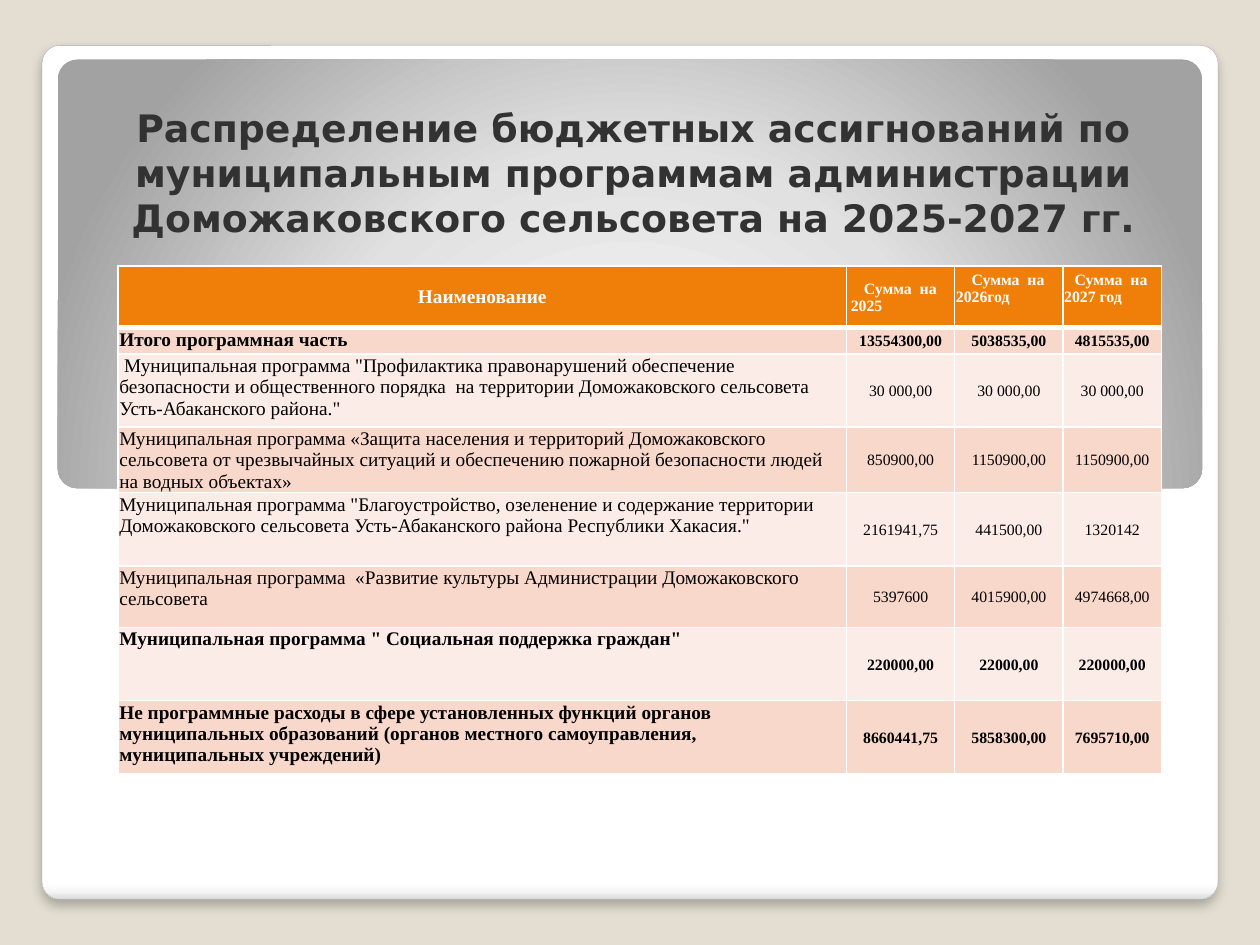
from lxml import etree
from pptx import Presentation
from pptx import util as u
from pptx.dml import color
from pptx.enum import shapes, text
from pptx.oxml import ns

SERIF = "Times New Roman"
TITLE = ("Распределение бюджетных ассигнований по муниципальным программам "
         "администрации Доможаковского сельсовета на 2025-2027 гг.")
HEADERS = [("Сумма  на 2025", 7.5, 2.5, 0), ("Сумма  на 2026год", 9, 0.7, 10),
           ("Сумма  на 2027 год", 6, 0.7, 10)]
ROWS = [
    ("Итого программная часть", "13554300,00", "5038535,00", "4815535,00"),
    (' Муниципальная программа "Профилактика правонарушений обеспечение безопасности '
     "и общественного порядка  на территории Доможаковского сельсовета "
     'Усть-Абаканского района."', "30 000,00", "30 000,00", "30 000,00"),
    ("Муниципальная программа «Защита населения и территорий Доможаковского сельсовета "
     "от чрезвычайных ситуаций и обеспечению пожарной безопасности людей на водных "
     "объектах»", "850900,00", "1150900,00", "1150900,00"),
    ('Муниципальная программа "Благоустройство, озеленение и содержание территории '
     'Доможаковского сельсовета Усть-Абаканского района Республики Хакасия."',
     "2161941,75", "441500,00", "1320142"),
    ("Муниципальная программа  «Развитие культуры Администрации Доможаковского "
     "сельсовета", "5397600", "4015900,00", "4974668,00"),
    ('Муниципальная программа " Социальная поддержка граждан"',
     "220000,00", "22000,00", "220000,00"),
    ("Не программные расходы в сфере установленных функций органов муниципальных "
     "образований (органов местного самоуправления,  муниципальных учреждений)",
     "8660441,75", "5858300,00", "7695710,00"),
]
BOLD_ROWS = {1, 6, 7}
COL_WIDTHS = [416.2, 61.9, 61.9, 56.2]
ROW_HEIGHTS = [35.3, 15, 41.8, 35.3, 41.8, 35.3, 41.8, 41.8]


def rgb(value):
    """Return the colour for a hex string."""
    return color.RGBColor.from_string(value)


def sub(parent, tag, **attrs):
    """Append a DrawingML child with the given attributes."""
    el = etree.SubElement(parent, ns.qn("a:" + tag))
    for name, value in attrs.items():
        el.set(name, str(value))
    return el


def add_panel(slide, box, radius, stops):
    """Add a rounded panel with gradient stops and return it with its gradient."""
    sp = slide.shapes.add_shape(shapes.MSO_SHAPE.ROUNDED_RECTANGLE,
                                *[u.Pt(v) for v in box])
    sp.adjustments[0] = radius
    sp.shadow.inherit = False
    sp.line.fill.background()
    sp.fill.gradient()
    grad = sp._element.spPr.find(ns.qn("a:gradFill"))
    for child in list(grad):
        grad.remove(child)
    stop_list = sub(grad, "gsLst")
    for pos, value in stops:
        sub(sub(stop_list, "gs", pos=pos * 1000), "srgbClr", val=value)
    return sp, grad


def add_card(slide):
    """Add the white card with its soft shadow."""
    sp, grad = add_panel(slide, (24, 26, 672, 488), 0.021,
                         [(0, "FFFFFF"), (98, "FFFFFF"), (99, "F7F7F7"), (100, "DADADA")])
    sub(grad, "lin", ang=5400000, scaled=0)
    sp.line.color.rgb = rgb("A4A4A4")
    sp.line.width = u.Pt(0.16)
    effects = sp._element.spPr.find(ns.qn("a:effectLst"))
    shadow = sub(effects, "outerShdw", blurRad=u.Pt(6), dist=u.Pt(4), dir=5400000,
                 algn="t", rotWithShape=0)
    sub(sub(shadow, "srgbClr", val="000000"), "alpha", val=25000)


def add_banner(slide):
    """Add the grey banner with its radial gradient."""
    _, grad = add_panel(slide, (33, 34, 654, 245), 0.046,
                        [(0, "FFFFFF"), (55, "E1E1E1"), (100, "A2A2A2")])
    sub(sub(grad, "path", path="circle"), "fillToRect",
        l=50000, t=175000, r=50000, b=-75000)


def add_run(p, content, size, hex_color, font, bold):
    """Append a formatted run to a paragraph."""
    r = p.add_run()
    r.text = content
    r.font.size = u.Pt(size)
    r.font.name = font
    r.font.bold = bold
    r.font.color.rgb = rgb(hex_color)


def set_title(slide):
    """Place and write the title above the panels."""
    sp = slide.shapes.title
    slide.shapes._spTree.append(sp._element)
    sp.left, sp.top, sp.width, sp.height = [u.Pt(v) for v in (56, 39.5, 612, 101.5)]
    tf = sp.text_frame
    tf.word_wrap = True
    tf.auto_size = text.MSO_AUTO_SIZE.NONE
    tf.vertical_anchor = text.MSO_ANCHOR.BOTTOM
    tf.margin_left = tf.margin_right = tf.margin_top = tf.margin_bottom = u.Pt(3.6)
    p = tf.paragraphs[0]
    p.alignment = text.PP_ALIGN.CENTER
    add_run(p, TITLE, 21.6, "323232", "DejaVu Sans", True)


def set_borders(cell, top, bottom):
    """Draw white borders round a cell."""
    tc_pr = cell._tc.get_or_add_tcPr()
    for side, width in (("L", 1), ("R", 1), ("T", top), ("B", bottom)):
        line = sub(tc_pr, "ln" + side, w=u.Pt(width))
        sub(sub(line, "solidFill"), "srgbClr", val="FFFFFF")


def fill_cell(cell, row, col, content):
    """Write and format one table cell."""
    set_borders(cell, 3 if row == 1 else 1, 3 if row == 0 else 1)
    cell.fill.solid()
    cell.fill.fore_color.rgb = rgb("F07F09" if row == 0 else ("FCECE7", "F9D8CC")[row % 2])
    cell.margin_left = cell.margin_right = cell.margin_top = u.Pt(0.7)
    cell.margin_bottom = 0
    is_name = row > 0 and col == 0
    cell.vertical_anchor = text.MSO_ANCHOR.TOP if is_name else text.MSO_ANCHOR.MIDDLE
    p = cell.text_frame.paragraphs[0]
    p.alignment = text.PP_ALIGN.LEFT if is_name else text.PP_ALIGN.CENTER
    add_run(p, content, 9 if col else 11, "000000" if row else "FFFFFF", SERIF,
            row == 0 or row in BOLD_ROWS)


def indent_header(cell, indent, left, bottom):
    """Set a year heading flush left with an indented first line."""
    cell.margin_left, cell.margin_bottom = u.Pt(left), u.Pt(bottom)
    p = cell.text_frame.paragraphs[0]
    p.alignment = text.PP_ALIGN.LEFT
    p._p.get_or_add_pPr().set("indent", str(u.Pt(indent)))


def add_budget_table(slide):
    """Add the table of budget allocations."""
    data = [("Наименование", *[h[0] for h in HEADERS]), *ROWS]
    table = slide.shapes.add_table(len(data), len(COL_WIDTHS), u.Pt(67.5), u.Pt(152),
                                   u.Pt(sum(COL_WIDTHS)), u.Pt(sum(ROW_HEIGHTS))).table
    for column, width in zip(table.columns, COL_WIDTHS):
        column.width = u.Pt(width)
    for row, height in zip(table.rows, ROW_HEIGHTS):
        row.height = u.Pt(height)
    for i, values in enumerate(data):
        for j, value in enumerate(values):
            fill_cell(table.cell(i, j), i, j, value)
    for j, (_, indent, left, bottom) in enumerate(HEADERS, 1):
        indent_header(table.cell(0, j), indent, left, bottom)


def main():
    """Build the budget slide."""
    prs = Presentation()
    prs.slide_width, prs.slide_height = u.Pt(720), u.Pt(540)
    slide = prs.slides.add_slide(prs.slide_layouts[5])
    slide.background.fill.solid()
    slide.background.fill.fore_color.rgb = rgb("E3DED1")
    add_card(slide)
    add_banner(slide)
    set_title(slide)
    add_budget_table(slide)
    prs.save("out.pptx")


if __name__ == "__main__":
    main()
